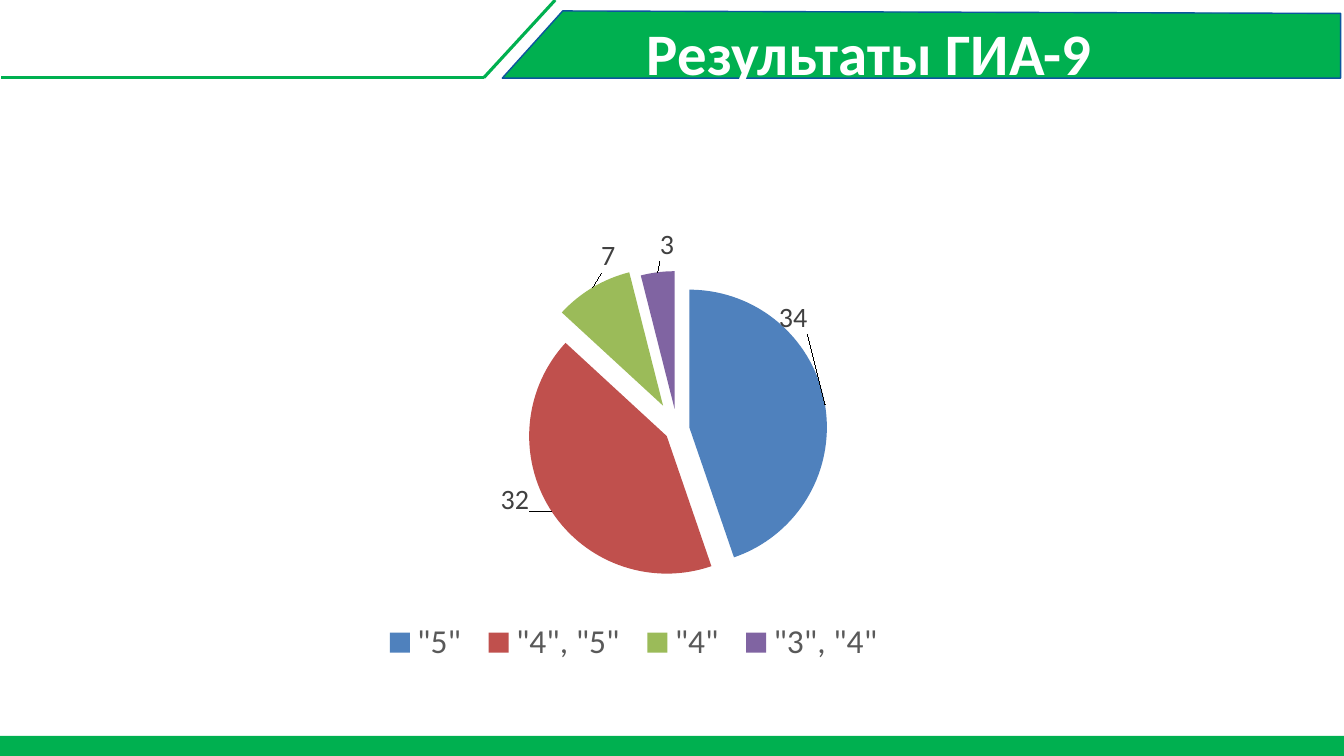
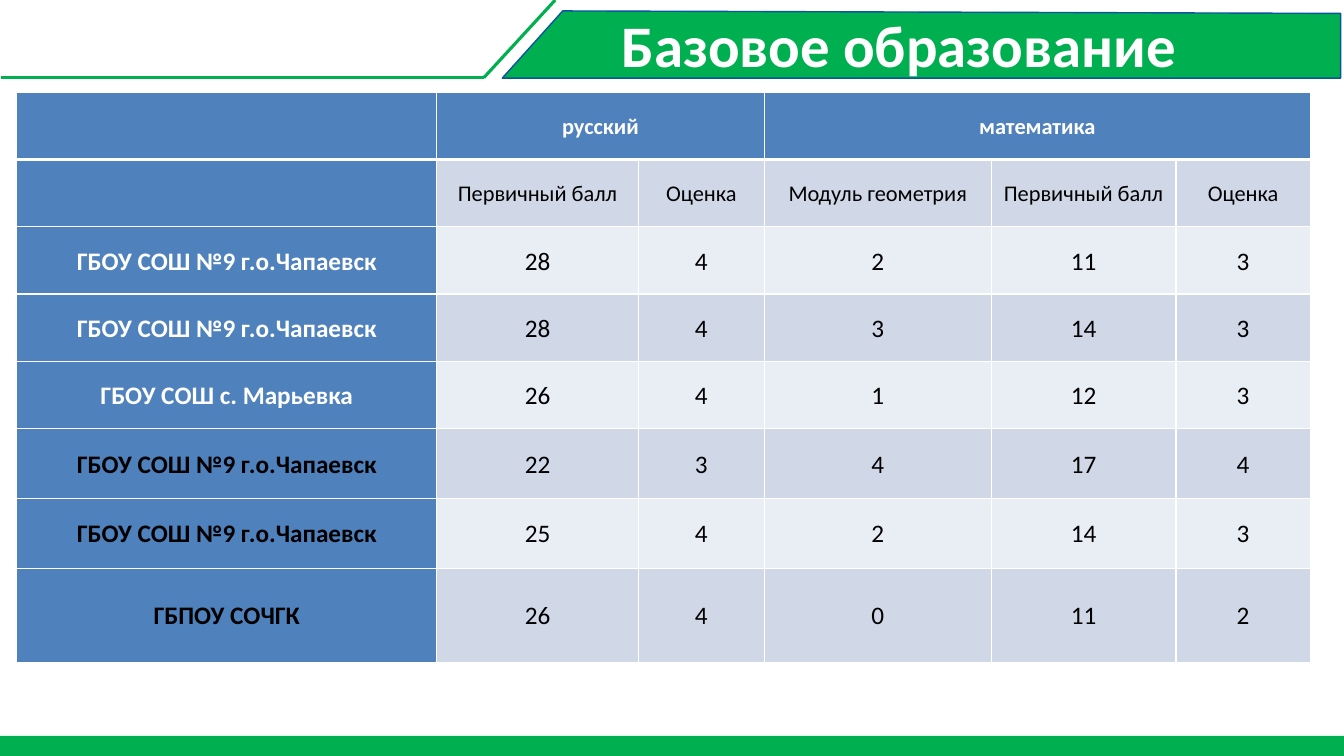
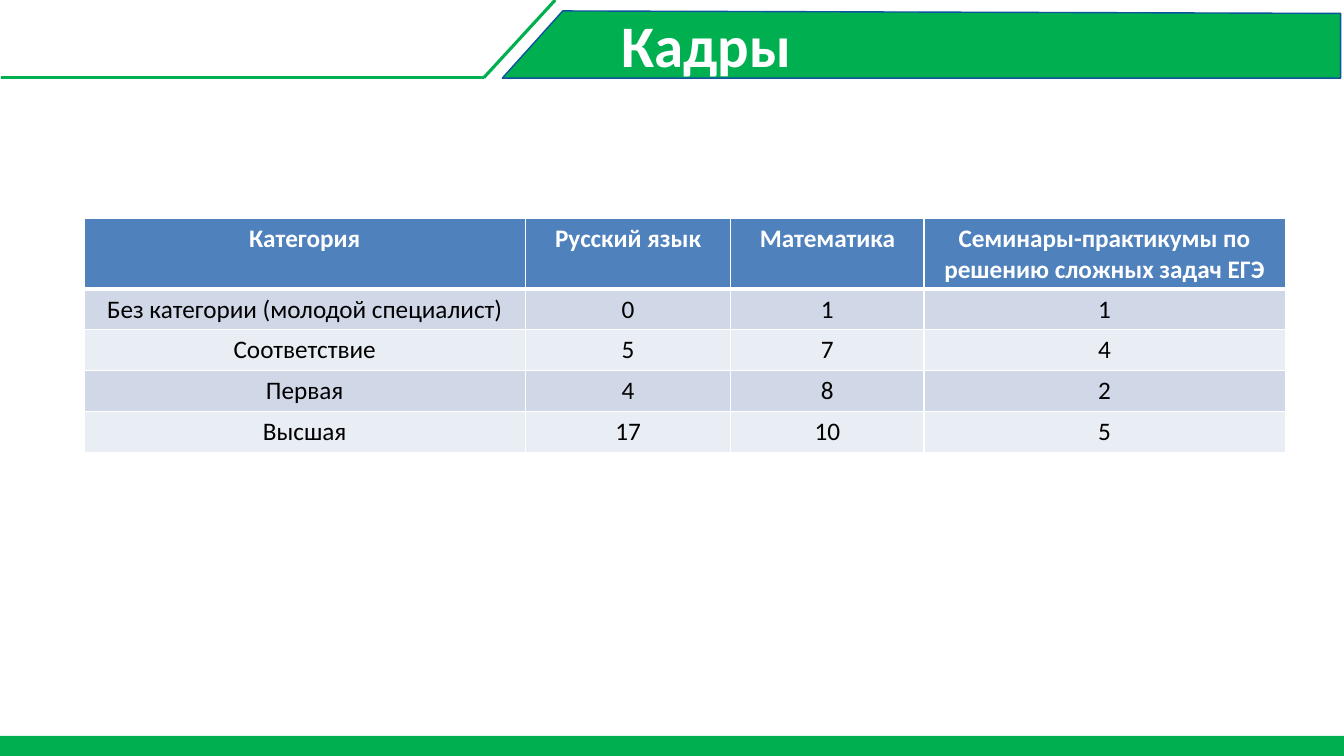
from dataclasses import dataclass

from lxml import etree
from pptx import Presentation
from pptx.chart.data import CategoryChartData
from pptx.dml.color import RGBColor
from pptx.enum.chart import XL_CHART_TYPE, XL_LABEL_POSITION, XL_LEGEND_POSITION
from pptx.enum.shapes import MSO_CONNECTOR, MSO_SHAPE
from pptx.enum.text import MSO_ANCHOR, PP_ALIGN
from pptx.oxml.ns import qn
from pptx.util import Inches, Pt

PIE = XL_CHART_TYPE.PIE
OUTSIDE_END = XL_LABEL_POSITION.OUTSIDE_END
LEGEND_BOTTOM = XL_LEGEND_POSITION.BOTTOM
STRAIGHT = MSO_CONNECTOR.STRAIGHT
RECTANGLE = MSO_SHAPE.RECTANGLE
CENTER = PP_ALIGN.CENTER
TOP, MIDDLE = MSO_ANCHOR.TOP, MSO_ANCHOR.MIDDLE

GRID_COLUMNS, GRID_ROWS = 160, 90
UNIT = Inches(1) / 12


@dataclass(frozen=True)
class Theme:
    font: str = "Calibri"
    green: str = "00B050"
    outline: str = "0C549E"
    header: str = "4F81BD"
    bands: tuple = ("D0D8E8", "E9EDF4")
    slices: tuple = ("4F81BD", "C0504D", "9BBB59", "8064A2")
    white: str = "FFFFFF"
    black: str = "000000"
    label: str = "404040"
    legend: str = "595959"
    title_size: float = 42
    legend_size: float = 23.9
    label_size: float = 20
    cell_size: float = 18
    subject_size: float = 16
    rule: float = 2.25
    border: float = 1
    header_border: float = 3


THEME = Theme()


@dataclass(frozen=True)
class CellStyle:
    """Text layout of a cell; margins are left/right and top/bottom in inches."""
    size: float = THEME.cell_size
    anchor: MSO_ANCHOR = MIDDLE
    margins: tuple = (0.07, 0)
    line_spacing: float = 1.07
    space_after: float = 0


SUBJECT_STYLE = CellStyle(size=THEME.subject_size, margins=(0.04, 0), space_after=8)
SCORE_STYLE = CellStyle()
STAFF_STYLE = CellStyle(anchor=TOP, margins=(0.1, 0.05), line_spacing=1)


def grid(*units):
    return [round(unit * UNIT) for unit in units]


def rgb(value):
    return RGBColor.from_string(value)


def style_font(font, size, color, bold=False):
    font.name = THEME.font
    font.size = Pt(size)
    font.bold = bold
    font.color.rgb = rgb(color)


def add_run(paragraph, text, size, color, bold=False):
    run = paragraph.add_run()
    run.text = text
    style_font(run.font, size, color, bold)


def add_rule(slide, *ends):
    connector = slide.shapes.add_connector(STRAIGHT, *grid(*ends))
    connector.line.color.rgb = rgb(THEME.green)
    connector.line.width = Pt(THEME.rule)
    etree.SubElement(connector.element.spPr, qn("a:effectLst"))


def fill_green(shape):
    shape.shadow.inherit = False
    shape.fill.solid()
    shape.fill.fore_color.rgb = rgb(THEME.green)


def add_frame(slide):
    """Banner, rules and footer band shared by all slides."""
    corners = [grid(*corner) for corner in
               ((67, 1.3), (159.6, 1.6), (159.6, 9.3), (59.8, 9.3))]
    builder = slide.shapes.build_freeform(*corners[0])
    builder.add_line_segments(corners[1:], close=True)
    banner = builder.convert_to_shape()
    fill_green(banner)
    banner.line.color.rgb = rgb(THEME.outline)
    banner.line.width = Pt(THEME.border)

    footer = slide.shapes.add_shape(RECTANGLE, *grid(0, 87.6, GRID_COLUMNS, 2.4))
    fill_green(footer)
    footer.line.fill.background()

    add_rule(slide, 66.1, 0, 57.6, 9.25)
    add_rule(slide, 57.6, 9.25, 0.1, 9.25)


def add_title(slide, text, place):
    frame = slide.shapes.add_textbox(*grid(*place)).text_frame
    frame.word_wrap = True
    frame.margin_left = frame.margin_right = frame.margin_top = frame.margin_bottom = 0
    add_run(frame.paragraphs[0], text, THEME.title_size, THEME.white, bold=True)


def set_borders(cell, top, bottom):
    properties = cell._tc.get_or_add_tcPr()
    sides = {"lnL": THEME.border, "lnR": THEME.border, "lnT": top, "lnB": bottom}
    for index, (side, width) in enumerate(sides.items()):
        line = etree.Element(qn(f"a:{side}"), w=str(Pt(width)))
        fill = etree.SubElement(line, qn("a:solidFill"))
        etree.SubElement(fill, qn("a:srgbClr"), val=THEME.white)
        properties.insert(index, line)


def fill_cell(cell, text, style, color, bold, background):
    cell.fill.solid()
    cell.fill.fore_color.rgb = rgb(background)
    cell.vertical_anchor = style.anchor
    cell.margin_left = cell.margin_right = Inches(style.margins[0])
    cell.margin_top = cell.margin_bottom = Inches(style.margins[1])
    if text:
        paragraph = cell.text_frame.paragraphs[0]
        paragraph.alignment = CENTER
        paragraph.line_spacing = style.line_spacing
        paragraph.space_after = Pt(style.space_after)
        add_run(paragraph, text, style.size, color, bold)


def add_table(slide, corner, widths, heights, rows, styles,
              header_column=False, dark_from=None):
    """Banded table; styles holds one CellStyle per row."""
    table = slide.shapes.add_table(
        len(rows), len(widths), *grid(*corner, sum(widths), sum(heights))).table
    table.first_row = table.horz_banding = False
    for column, width in zip(table.columns, grid(*widths)):
        column.width = width
    for row, height in zip(table.rows, grid(*heights)):
        row.height = height
    for row_index, (texts, style) in enumerate(zip(rows, styles)):
        for column_index, text in enumerate(texts):
            heading = row_index == 0 or (header_column and column_index == 0)
            dark = not heading or (dark_from is not None and row_index >= dark_from)
            cell = table.cell(row_index, column_index)
            fill_cell(cell, text, style,
                      THEME.black if dark else THEME.white, heading,
                      THEME.header if heading else THEME.bands[(row_index - 1) % 2])
            set_borders(cell,
                        THEME.header_border if row_index == 1 else THEME.border,
                        THEME.header_border if row_index == 0 else THEME.border)
    return table


def make_layout(inner=False, **shares):
    """Manual chart layout; shares are fractions of the chart's size."""
    layout = etree.Element(qn("c:layout"))
    manual = etree.SubElement(layout, qn("c:manualLayout"))
    if inner:
        etree.SubElement(manual, qn("c:layoutTarget"), val="inner")
    if "w" in shares:
        for mode in ("xMode", "yMode"):
            etree.SubElement(manual, qn(f"c:{mode}"), val="edge")
    for name, share in shares.items():
        etree.SubElement(manual, qn(f"c:{name}"), val=str(share))
    return layout


def add_pie(slide, place, values, explosions, label_shifts):
    data = CategoryChartData()
    data.categories = list(values)
    data.add_series("Series 1", list(values.values()))
    chart = slide.shapes.add_chart(PIE, *grid(*place), data).chart
    style_font(chart.font, THEME.label_size, THEME.label)
    chart.has_title = False
    chart.has_legend = True
    chart.legend.position = LEGEND_BOTTOM
    chart.legend.include_in_layout = False
    style_font(chart.legend.font, THEME.legend_size, THEME.legend)
    chart.plots[0].vary_by_categories = True

    points = chart.plots[0].series[0].points
    for index, color in enumerate(THEME.slices):
        fill = points[index].format.fill
        fill.solid()
        fill.fore_color.rgb = rgb(color)
        label = points[index].data_label
        style_font(label.font, THEME.label_size, THEME.label)
        label.position = OUTSIDE_END

    root = chart.element
    for point, explosion in zip(root.iter(qn("c:dPt")), explosions):
        element = etree.Element(qn("c:explosion"), val=str(explosion))
        point.find(qn("c:spPr")).addprevious(element)
    for label, (shift_x, shift_y) in zip(root.iter(qn("c:dLbl")), label_shifts):
        label.insert(1, make_layout(x=shift_x, y=shift_y))

    plot_area = next(root.iter(qn("c:plotArea")))
    for layout in plot_area.findall(qn("c:layout")):
        plot_area.remove(layout)
    plot_area.insert(0, make_layout(inner=True, x=0.33, y=0.16, w=0.32, h=0.6))
    legend = next(root.iter(qn("c:legend")))
    for layout in legend.findall(qn("c:layout")):
        legend.remove(layout)
    legend.find(qn("c:legendPos")).addnext(make_layout(x=0.14, y=0.87, w=0.6, h=0.11))


def add_results(slide):
    add_title(slide, "Результаты ГИА-9", (77, 2, 58, 7.2))
    add_pie(slide, (30, 26, 103.3, 54.6),
            {'"5"': 34, '"4", "5"': 32, '"4"': 7, '"3", "4"': 3},
            explosions=(9, 9, 20, 15),
            label_shifts=((-0.06, -0.15), (-0.02, -0.07), (0.03, -0.02), (0.02, -0.01)))


def add_basic_education(slide):
    school = "ГБОУ СОШ №9 г.о.Чапаевск"
    rows = [
        ("", "русский", "", "математика", "", ""),
        ("", "Первичный балл", "Оценка", "Модуль геометрия", "Первичный балл", "Оценка"),
        (school, "28", "4", "2", "11", "3"),
        (school, "28", "4", "3", "14", "3"),
        ("ГБОУ СОШ с. Марьевка", "26", "4", "1", "12", "3"),
        (school, "22", "3", "4", "17", "4"),
        (school, "25", "4", "2", "14", "3"),
        ("ГБПОУ СОЧГК", "26", "4", "0", "11", "2"),
    ]
    table = add_table(slide, (2, 11), (50, 24, 15, 27, 22, 16),
                      [8] * 5 + [8.33] * 2 + [11.2], rows,
                      [SUBJECT_STYLE] * 2 + [SCORE_STYLE] * 6,
                      header_column=True, dark_from=5)
    for first, last in ((1, 2), (3, 5)):
        table.cell(0, first).merge(table.cell(0, last))
    add_title(slide, "Базовое образование", (74, 1, 77.2, 8.5))


def add_staff(slide):
    add_title(slide, "Кадры", (74, 1, 77.2, 8.5))
    rows = [
        ("Категория", "Русский язык", "Математика",
         "Семинары-практикумы по решению сложных задач ЕГЭ"),
        ("Без категории (молодой специалист)", "0", "1", "1"),
        ("Соответствие", "5", "7", "4"),
        ("Первая", "4", "8", "2"),
        ("Высшая", "17", "10", "5"),
    ]
    add_table(slide, (10, 26), (52.55, 24.45, 23, 43), [8.2] + [4.86] * 4, rows,
              [STAFF_STYLE] * len(rows))


def main():
    presentation = Presentation()
    presentation.slide_width, presentation.slide_height = grid(GRID_COLUMNS, GRID_ROWS)
    blank = presentation.slide_layouts[6]
    for add_content in (add_results, add_basic_education, add_staff):
        slide = presentation.slides.add_slide(blank)
        add_frame(slide)
        add_content(slide)
    presentation.save("out.pptx")


if __name__ == "__main__":
    main()
